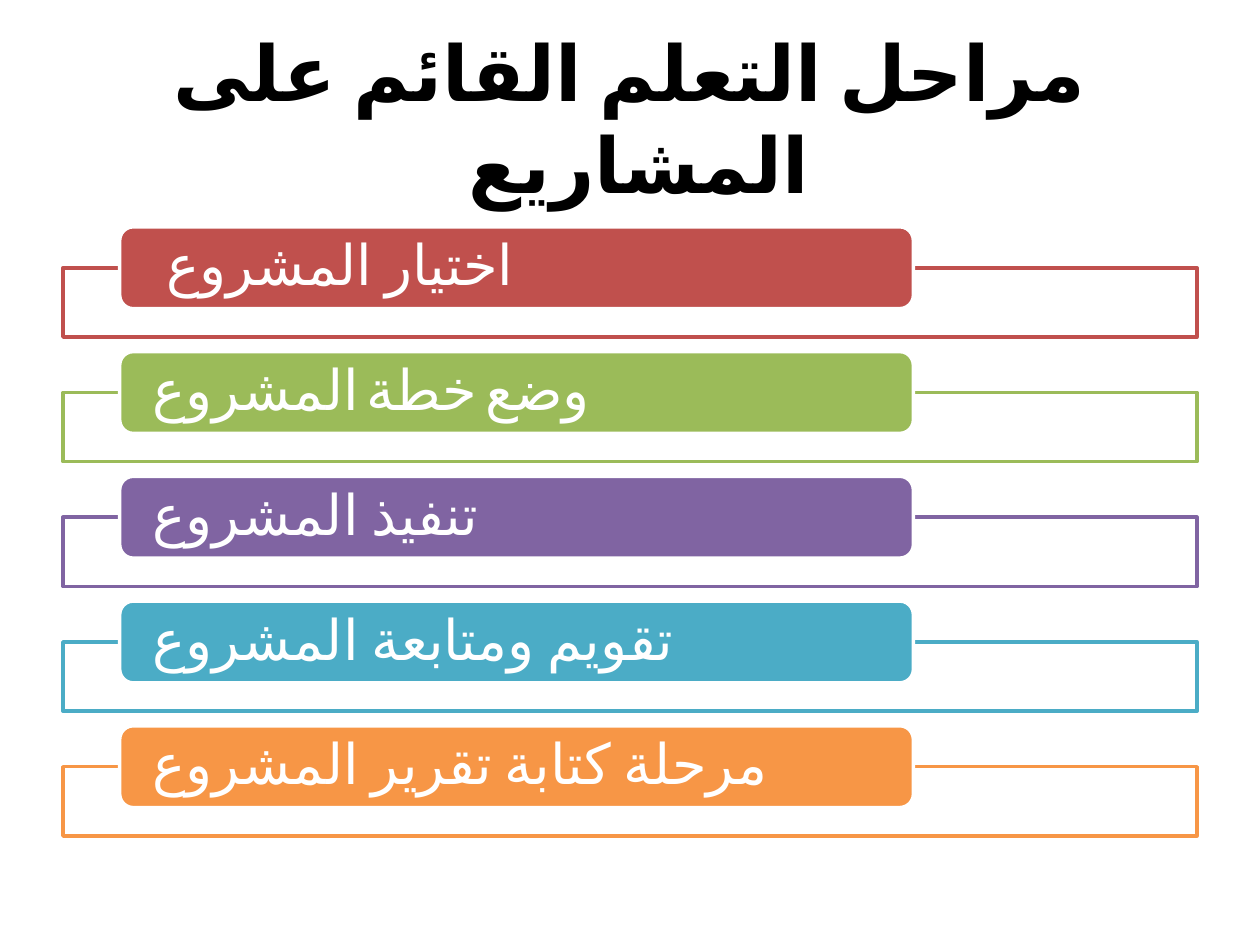
"""Build a slide listing the five stages of project-based learning."""
from lxml import etree
from pptx import Presentation
from pptx.dml.color import RGBColor
from pptx.enum.lang import MSO_LANGUAGE_ID
from pptx.enum.shapes import MSO_SHAPE
from pptx.enum.text import MSO_ANCHOR, MSO_AUTO_SIZE, PP_ALIGN
from pptx.oxml.ns import qn
from pptx.util import Inches, Pt

RECT, ROUNDED = MSO_SHAPE.RECTANGLE, MSO_SHAPE.ROUNDED_RECTANGLE
MIDDLE, NO_FIT = MSO_ANCHOR.MIDDLE, MSO_AUTO_SIZE.NONE
LEFT, CENTER = PP_ALIGN.LEFT, PP_ALIGN.CENTER
ARABIC = MSO_LANGUAGE_ID.ARABIC

FONT = "Calibri"
COLORS = {
    "black": "000000", "white": "FFFFFF", "red": "C0504D", "green": "9BBB59",
    "purple": "8064A2", "teal": "4BACC6", "orange": "F79646",
}
TITLE = "مراحل التعلم القائم على المشاريع "
WORD, GAP = 32, 20
STAGES = [
    ("red", 0.34, [("اختيار المشروع", WORD)]),
    ("green", 0.23, [("وضع", WORD), (" ", GAP), ("خطة", WORD), (" ", GAP), ("المشروع", WORD)]),
    ("purple", 0.23, [("تنفيذ المشروع", WORD)]),
    ("teal", 0.23, [("تقويم ومتابعة المشروع", WORD)]),
    ("orange", 0.23, [("مرحلة كتابة تقرير المشروع", WORD)]),
]
MARGIN, WIDTH = 0.5, 9
BAR_LEFT, BAR_WIDTH, BAR_HEIGHT = MARGIN + WIDTH * 0.05, WIDTH * 0.7, 0.65
FIRST_TOP, PITCH = 1.8, 0.99
FRAME_HEIGHT = 0.55


def rgb(name):
    return RGBColor.from_string(COLORS[name])


def add_box(slide, kind, box, fill, line):
    shape = slide.shapes.add_shape(kind, *map(Inches, box))
    shape.shadow.inherit = False
    shape.fill.solid()
    shape.fill.fore_color.rgb = rgb(fill)
    shape.line.color.rgb = rgb(line)
    shape.line.width = Pt(2)
    return shape


def write(frame, runs, color, align, bold=False):
    for name, value in {"word_wrap": True, "auto_size": NO_FIT, "vertical_anchor": MIDDLE}.items():
        setattr(frame, name, value)
    paragraph = frame.paragraphs[0]
    paragraph.alignment = align
    paragraph._p.get_or_add_pPr().set("rtl", "1")
    for text, size in runs:
        run = paragraph.add_run()
        run.text = text
        style = {"name": FONT, "size": Pt(size), "bold": bold, "language_id": ARABIC}
        for name, value in style.items():
            setattr(run.font, name, value)
        run.font.color.rgb = rgb(color)
        etree.SubElement(run.font._rPr, qn("a:cs")).set("typeface", FONT)
    return paragraph


def add_stage(slide, row, color, inset, runs):
    top = FIRST_TOP + row * PITCH
    frame_box = (MARGIN, top + BAR_HEIGHT / 2, WIDTH, FRAME_HEIGHT)
    outline = add_box(slide, RECT, frame_box, "white", color)
    tint = outline.fill._xPr.find(qn("a:solidFill"))[0]
    etree.SubElement(tint, qn("a:alpha")).set("val", "90000")
    bar = add_box(slide, ROUNDED, (BAR_LEFT, top, BAR_WIDTH, BAR_HEIGHT), color, "white")
    margins = {"margin_left": inset, "margin_right": 0.27, "margin_top": 0, "margin_bottom": 0}
    for name, value in margins.items():
        setattr(bar.text_frame, name, Inches(value))
    write(bar.text_frame, runs, "white", LEFT).line_spacing = 0.9


def main():
    deck = Presentation()
    deck.slide_width, deck.slide_height = Inches(10), Inches(7.5)
    slide = deck.slides.add_slide(deck.slide_layouts[5])
    title = slide.shapes.title
    title.left, title.top, title.width, title.height = map(Inches, (MARGIN, 0.3, WIDTH, 1.25))
    write(title.text_frame, [(TITLE, 44)], "black", CENTER, bold=True)
    for row, stage in enumerate(STAGES):
        add_stage(slide, row, *stage)
    deck.save("out.pptx")


if __name__ == "__main__":
    main()
